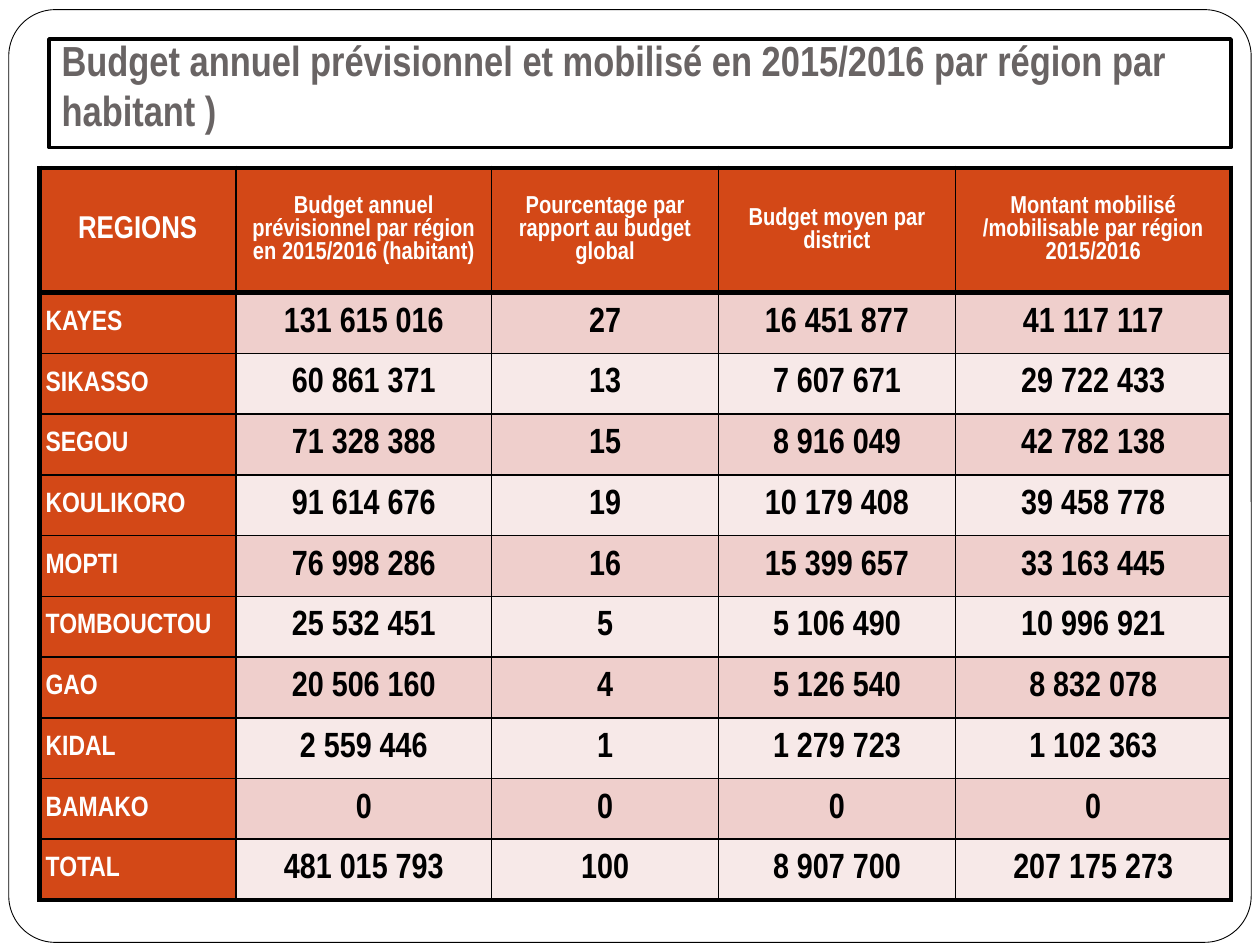
from dataclasses import dataclass

from lxml.etree import SubElement
from pptx import Presentation
from pptx.dml.color import RGBColor
from pptx.enum.shapes import MSO_SHAPE as Shape
from pptx.enum.text import MSO_ANCHOR as Anchor, MSO_AUTO_SIZE as AutoSize, PP_ALIGN as Align
from pptx.oxml.ns import qn
from pptx.util import Pt


@dataclass(frozen=True)
class Theme:
    font: str = "Arial Narrow"
    white: str = "FFFFFF"
    black: str = "000000"
    title: str = "696464"
    accent: str = "D34817"
    bands: tuple = ("EFCFCC", "F7E9E8")
    title_size: float = 24
    corner_size: float = 18
    header_size: float = 14
    region_size: float = 16
    value_size: float = 20
    thin: float = 1
    thick: float = 3


THEME = Theme()
TITLE = "Budget annuel prévisionnel et mobilisé en 2015/2016 par région par habitant )"
HEADERS = [
    "REGIONS",
    "Budget annuel prévisionnel par région en 2015/2016 (habitant)",
    "Pourcentage par rapport au budget global",
    "Budget moyen par district",
    "Montant mobilisé /mobilisable par région 2015/2016",
]
REGIONS = [
    ("KAYES", "131 615 016", "27", "16 451 877", "41 117 117"),
    ("SIKASSO", "60 861 371", "13", "7 607 671", "29 722 433"),
    ("SEGOU", "71 328 388", "15", "8 916 049", "42 782 138"),
    ("KOULIKORO", "91 614 676", "19", "10 179 408", "39 458 778"),
    ("MOPTI", "76 998 286", "16", "15 399 657", "33 163 445"),
    ("TOMBOUCTOU", "25 532 451", "5", "5 106 490", "10 996 921"),
    ("GAO", "20 506 160", "4", "5 126 540", "8 832 078"),
    ("KIDAL", "2 559 446", "1", "1 279 723", "1 102 363"),
    ("BAMAKO", "0", "0", "0", "0"),
    ("TOTAL", "481 015 793", "100", "8 907 700", "207 175 273"),
]
COLUMN_WIDTHS = [112.3, 146.2, 129.6, 135.4, 157.5]
HEADER_HEIGHT, ROW_HEIGHT = 71.3, 34.7


def color(value):
    return RGBColor.from_string(value)


def format_runs(paragraph, size, text_color):
    for run in paragraph.runs:
        font = run.font
        font.name, font.size, font.bold = THEME.font, Pt(size), True
        font.color.rgb = color(text_color)


def set_outline(shape, width):
    shape.line.color.rgb = color(THEME.black)
    shape.line.width = Pt(width)


def add_title(slide):
    title = slide.shapes.title
    title.left, title.top, title.width, title.height = Pt(28), Pt(22.3), Pt(675.4), Pt(62)
    set_outline(title, 2.25)
    frame = title.text_frame
    frame.text = TITLE
    frame.word_wrap, frame.auto_size = True, AutoSize.NONE
    frame.vertical_anchor = Anchor.BOTTOM
    frame.margin_left = frame.margin_right = frame.margin_bottom = Pt(7.2)
    frame.margin_top = Pt(3.6)
    paragraph = frame.paragraphs[0]
    paragraph.alignment = Align.LEFT
    format_runs(paragraph, THEME.title_size, THEME.title)


def add_page_frame(slide):
    """Draw the rounded page border behind the title."""
    frame = slide.shapes.add_shape(Shape.ROUNDED_RECTANGLE, Pt(5), Pt(5.5), Pt(710), Pt(533))
    frame.adjustments[0] = 0.05
    frame.shadow.inherit = False
    frame.fill.solid()
    frame.fill.fore_color.rgb = color(THEME.white)
    set_outline(frame, 0.5)
    slide.shapes.title.element.addprevious(frame.element)


def set_borders(cell, widths):
    """Set border widths, keyed by side: L, R, T, B in that order."""
    properties = cell._tc.get_or_add_tcPr()
    for side, width in widths.items():
        line = SubElement(properties, qn(f"a:ln{side}"), w=str(Pt(width)))
        fill = SubElement(line, qn("a:solidFill"))
        SubElement(fill, qn("a:srgbClr"), val=THEME.black)


def cell_style(row, column):
    """Return fill, text colour, text size and alignment for a grid position."""
    if row == 0:
        size = THEME.header_size if column else THEME.corner_size
        return THEME.accent, THEME.white, size, Align.CENTER
    if column == 0:
        return THEME.accent, THEME.white, THEME.region_size, Align.LEFT
    return THEME.bands[(row - 1) % 2], THEME.black, THEME.value_size, Align.CENTER


def fill_cell(cell, text, row, column):
    fill_color, text_color, size, alignment = cell_style(row, column)
    last_row, last_column = len(REGIONS), len(HEADERS) - 1
    thick_sides = {
        "L": column == 0,
        "R": column == last_column,
        "T": row in (0, 1),
        "B": row in (0, last_row),
    }
    set_borders(cell, {side: THEME.thick if thick else THEME.thin
                       for side, thick in thick_sides.items()})
    cell.fill.solid()
    cell.fill.fore_color.rgb = color(fill_color)
    cell.vertical_anchor = Anchor.MIDDLE
    cell.margin_left = cell.margin_right = Pt(3.6)
    cell.margin_top = cell.margin_bottom = 0
    cell.text_frame.text = text
    paragraph = cell.text_frame.paragraphs[0]
    paragraph.alignment = alignment
    format_runs(paragraph, size, text_color)


def add_budget_table(slide):
    rows = [HEADERS, *REGIONS]
    heights = [HEADER_HEIGHT] + [ROW_HEIGHT] * len(REGIONS)
    table = slide.shapes.add_table(
        len(rows), len(HEADERS), Pt(22.5), Pt(96),
        Pt(sum(COLUMN_WIDTHS)), Pt(sum(heights)),
    ).table
    for column, width in zip(table.columns, COLUMN_WIDTHS):
        column.width = Pt(width)
    for row, height in zip(table.rows, heights):
        row.height = Pt(height)
    for row_index, texts in enumerate(rows):
        for column_index, text in enumerate(texts):
            fill_cell(table.cell(row_index, column_index), text, row_index, column_index)


def main():
    presentation = Presentation()
    presentation.slide_width, presentation.slide_height = Pt(720), Pt(540)
    slide = presentation.slides.add_slide(presentation.slide_layouts[5])
    add_title(slide)
    add_page_frame(slide)
    add_budget_table(slide)
    presentation.save("out.pptx")


if __name__ == "__main__":
    main()
